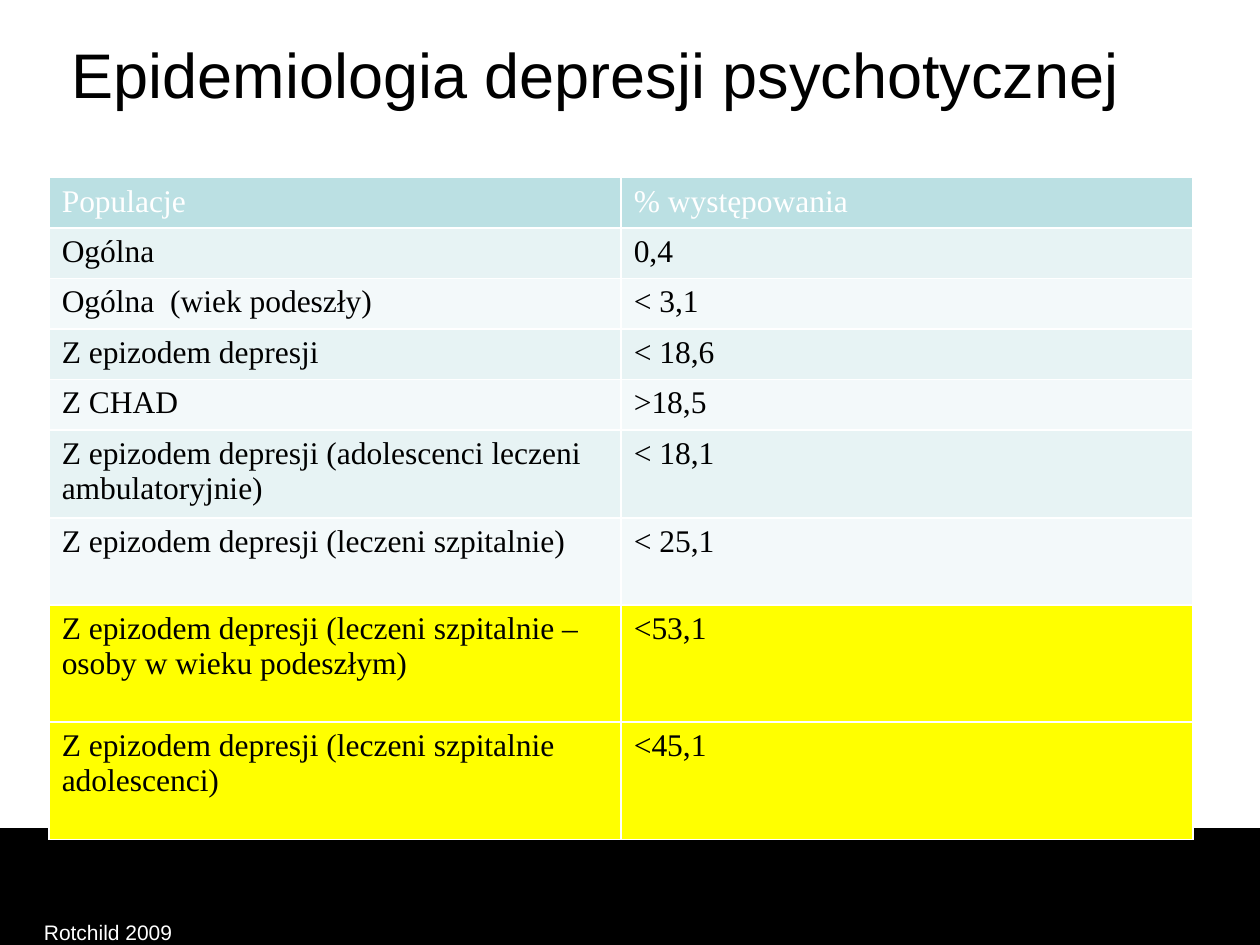
from pptx import Presentation, util as u
from pptx.dml.color import RGBColor
from pptx.enum import shapes, text
from pptx.oxml import parse_xml
from pptx.oxml.ns import nsdecls

BLACK, WHITE, YELLOW = "000000", "FFFFFF", "FFFF00"
HEADER, BAND_DARK, BAND_LIGHT = "BBE0E3", "E7F3F4", "F3F9FA"

POPULATIONS = [
    ("Populacje", "% występowania", 0.38, HEADER),
    ("Ogólna", "0,4", 0.38, BAND_DARK),
    ("Ogólna  (wiek podeszły)", "< 3,1", 0.38, BAND_LIGHT),
    ("Z epizodem depresji", "< 18,6", 0.38, BAND_DARK),
    ("Z CHAD", ">18,5", 0.38, BAND_LIGHT),
    ("Z epizodem depresji (adolescenci leczeni ambulatoryjnie)", "< 18,1", 0.65, BAND_DARK),
    ("Z epizodem depresji (leczeni szpitalnie)", "< 25,1", 0.69, BAND_LIGHT),
    ("Z epizodem depresji (leczeni szpitalnie – osoby w wieku podeszłym)", "<53,1", 0.93, YELLOW),
    ("Z epizodem depresji (leczeni szpitalnie adolescenci)", "<45,1", 0.93, YELLOW),
]


def rgb(value):
    return RGBColor.from_string(value)


class SlideBuilder:
    """Holds the fonts and the current slide, and adds each kind of element."""

    heading_font = "Arial"
    table_font = "Times New Roman"

    def __init__(self, slide):
        self.slide = slide

    def set_words(self, frame, words, size, font, color):
        frame.text = words
        for run in frame.paragraphs[0].runs:
            run.font.size = u.Pt(size)
            run.font.name = font
            run.font.color.rgb = rgb(color)

    def band(self, left, top, width, height, color):
        band = self.slide.shapes.add_shape(
            shapes.MSO_SHAPE.RECTANGLE, *map(u.Inches, (left, top, width, height)))
        band.shadow.inherit = False
        band.fill.solid()
        band.fill.fore_color.rgb = rgb(color)
        band.line.color.rgb = rgb(color)
        band.line.width = u.Pt(0.75)

    def label(self, left, top, width, height, words, size, color, anchor):
        frame = self.slide.shapes.add_textbox(
            *map(u.Inches, (left, top, width, height))).text_frame
        frame.word_wrap = True
        frame.vertical_anchor = anchor
        self.set_words(frame, words, size, self.heading_font, color)

    def border(self, cell, color, points):
        properties = cell._tc.get_or_add_tcPr()
        for position, side in enumerate(("lnL", "lnR", "lnT", "lnB")):
            properties.insert(position, parse_xml(
                f'<a:{side} {nsdecls("a")} w="{u.Pt(points)}"><a:solidFill>'
                f'<a:srgbClr val="{color}"/></a:solidFill></a:{side}>'))

    def table(self, left, top, width, rows):
        height = sum(row[2] for row in rows)
        table = self.slide.shapes.add_table(
            len(rows), 2, *map(u.Inches, (left, top, width, height))).table
        for index, (population, rate, row_height, fill) in enumerate(rows):
            table.rows[index].height = u.Inches(row_height)
            color = BLACK if index else WHITE
            for cell, words in zip(table.rows[index].cells, (population, rate)):
                cell.fill.solid()
                cell.fill.fore_color.rgb = rgb(fill)
                self.border(cell, WHITE, 1)
                self.set_words(cell.text_frame, words, 18, self.table_font, color)


def main():
    deck = Presentation()
    deck.slide_width, deck.slide_height = u.Inches(10), u.Inches(7.5)
    builder = SlideBuilder(deck.slides.add_slide(deck.slide_layouts[6]))
    builder.band(0, 6.58, 10, 0.92, BLACK)
    builder.label(0.47, 0, 9, 1.17, "Epidemiologia depresji psychotycznej", 36, BLACK,
                  text.MSO_ANCHOR.MIDDLE)
    builder.table(0.39, 1.41, 9.08, POPULATIONS)
    builder.label(0.25, 7.25, 6.42, 0.25, "Rotchild 2009", 12, WHITE, text.MSO_ANCHOR.TOP)
    deck.save("out.pptx")


if __name__ == "__main__":
    main()
